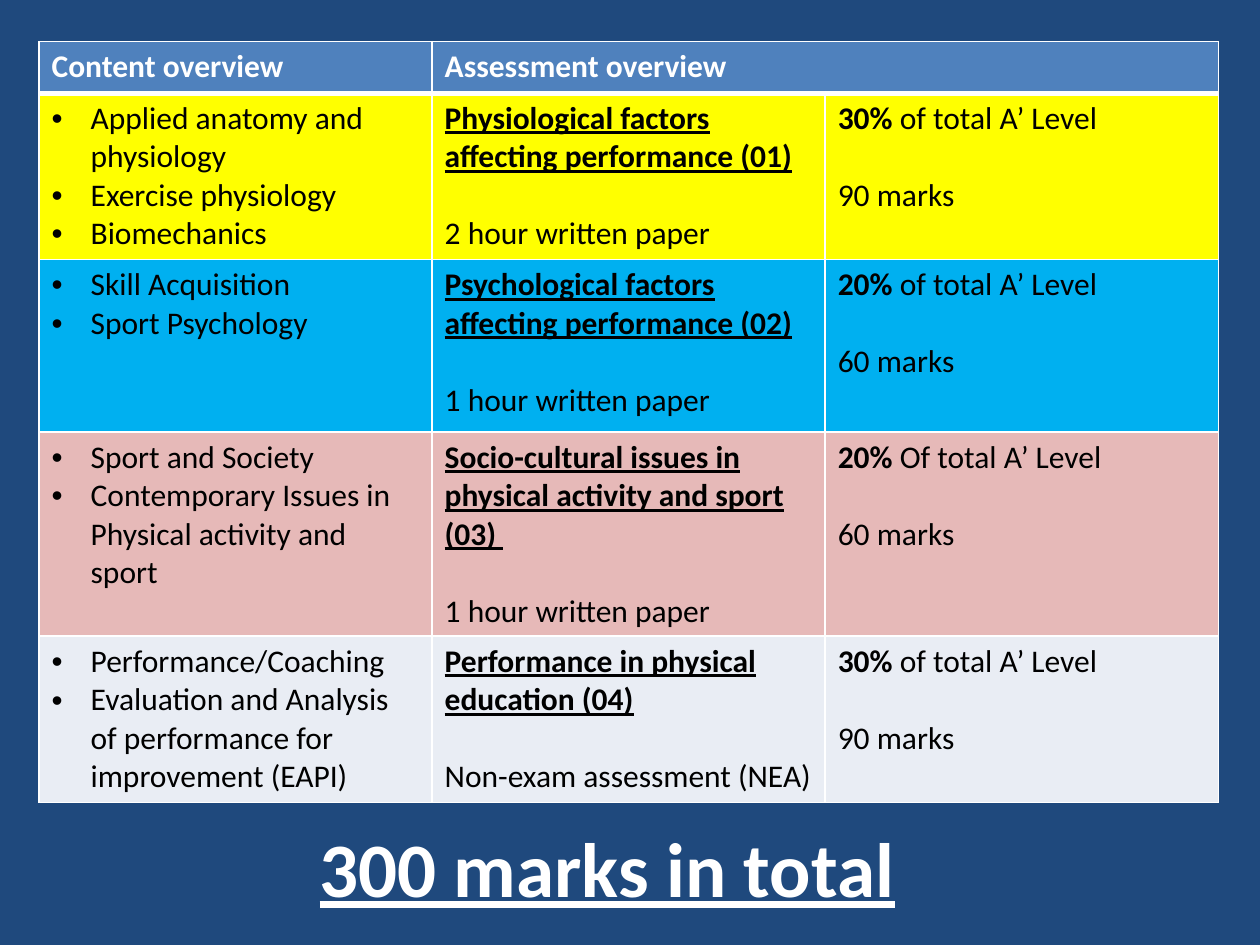
from pptx import Presentation
from pptx.util import Inches, Pt
from pptx.dml.color import RGBColor
from pptx.enum.text import PP_ALIGN, MSO_ANCHOR
from lxml.etree import SubElement
from pptx.oxml.ns import qn

# Content
HEADS = ["Content overview", "Assessment overview"]
UNITS = [
    ("yellow", ["Applied anatomy and physiology", "Exercise physiology", "Biomechanics"],
     "Physiological factors affecting performance (01)", "2 hour written paper",
     "30%", " of total A’ Level", "90 marks"),
    ("blue", ["Skill Acquisition", "Sport Psychology"],
     "Psychological factors affecting performance (02)", "1 hour written paper",
     "20%", " of total A’ Level", "60 marks"),
    ("pink", ["Sport and Society", "Contemporary Issues in Physical activity and sport"],
     "Socio-cultural issues in physical activity and sport (03) ", "1 hour written paper",
     "20%", " Of total A’ Level", "60 marks"),
    ("pale", ["Performance/Coaching",
              "Evaluation and Analysis of performance for improvement (EAPI)"],
     "Performance in physical education (04)", "Non-exam assessment (NEA)",
     "30%", " of total A’ Level", "90 marks"),
]
TOTAL = "300 marks in total"
ROWS = [0.41, 1.32, 1.37, 1.62, 1.32]
COLS = [3.12, 3.12, 3.12]
HUES = {"navy": "1F497D", "head": "4F81BD", "yellow": "FFFF00", "blue": "00B0F0",
        "pink": "E6B9B8", "pale": "E9EDF4", "white": "FFFFFF", "black": "000000"}


def tint(name):
    return RGBColor.from_string(HUES[name])


def write(para, text, size=18, hue="black", bold=False, line=False):
    run = para.add_run()
    run.text = text
    font = run.font
    font.name, font.size, font.bold, font.underline = "Calibri", Pt(size), bold, line
    font.color.rgb = tint(hue)


def bullet(para):
    props = para._p.get_or_add_pPr()
    props.set("marL", str(Inches(0.31)))
    props.set("indent", str(-Inches(0.31)))
    SubElement(props, qn("a:buFont"), typeface="Arial")
    SubElement(props, qn("a:buChar"), char="•")


def paint(cell, hue, top=1, base=1):
    props = cell._tc.get_or_add_tcPr()
    for side, width in zip("LRTB", (1, 1, top, base)):
        edge = SubElement(props, qn("a:ln" + side), w=str(Pt(width)))
        fill = SubElement(edge, qn("a:solidFill"))
        SubElement(fill, qn("a:srgbClr"), val=HUES["white"])
    cell.fill.solid()
    cell.fill.fore_color.rgb = tint(hue)


def below(cell, text):
    para = cell.text_frame.add_paragraph()
    para.space_before = Pt(22)  # one line of space
    write(para, text)


deck = Presentation()
deck.slide_width, deck.slide_height = Inches(10), Inches(7.5)
slide = deck.slides.add_slide(deck.slide_layouts[6])
slide.background.fill.solid()
slide.background.fill.fore_color.rgb = tint("navy")

# Total line
box = slide.shapes.add_textbox(Inches(0.32), Inches(6.25), Inches(9), Inches(1.25))
frame = box.text_frame
frame.word_wrap = True
frame.vertical_anchor = MSO_ANCHOR.MIDDLE
frame.paragraphs[0].alignment = PP_ALIGN.CENTER
write(frame.paragraphs[0], TOTAL, size=44, hue="white", bold=True, line=True)

# Table grid
table = slide.shapes.add_table(len(ROWS), len(COLS), Inches(0.31), Inches(0.33),
                               Inches(sum(COLS)), Inches(sum(ROWS))).table
for col, width in zip(table.columns, COLS):
    col.width = Inches(width)
for row, height in zip(table.rows, ROWS):
    row.height = Inches(height)

# Header row
for cell in table.rows[0].cells:
    paint(cell, "head", base=3)
table.cell(0, 1).merge(table.cell(0, 2))
for c, text in enumerate(HEADS):
    write(table.cell(0, c).text_frame.paragraphs[0], text, hue="white", bold=True)

# Unit rows
for r, (hue, topics, name, exam, share, rest, marks) in enumerate(UNITS, 1):
    left, mid, right = table.rows[r].cells
    for cell in (left, mid, right):
        paint(cell, hue, top=3 if r == 1 else 1)
    for i, topic in enumerate(topics):
        frame = left.text_frame
        para = frame.add_paragraph() if i else frame.paragraphs[0]
        bullet(para)
        write(para, topic)
    write(mid.text_frame.paragraphs[0], name, bold=True, line=True)
    below(mid, exam)
    para = right.text_frame.paragraphs[0]
    write(para, share, bold=True)
    write(para, rest)
    below(right, marks)

deck.save("out.pptx")
